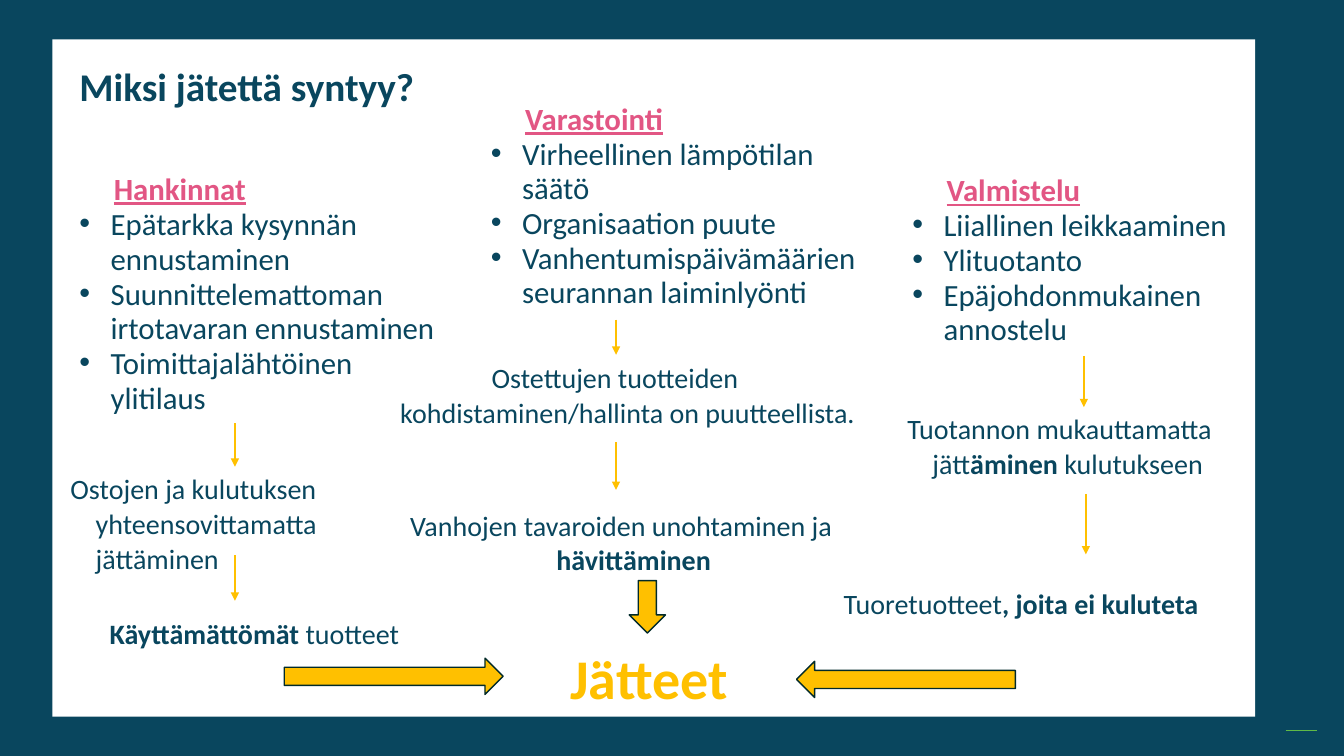
from pptx import Presentation
from pptx.dml.color import RGBColor
from pptx.enum.shapes import MSO_CONNECTOR, MSO_SHAPE
from pptx.enum.text import PP_ALIGN
from pptx.oxml.ns import qn
from pptx.util import Inches, Pt
from lxml.etree import SubElement

NAVY = RGBColor(0x09, 0x46, 0x5E)
PINK = RGBColor(0xE2, 0x56, 0x84)
GOLD = RGBColor(0xFF, 0xC0, 0x00)
GREEN = RGBColor(0x60, 0xBA, 0x47)
OUTLINE = RGBColor(0x01, 0x2A, 0x2A)
WHITE = RGBColor(0xFF, 0xFF, 0xFF)

CAUSES = [
    ((0.69, 1.66, 3.83, 3.08), "Hankinnat", [
        "Epätarkka kysynnän ennustaminen",
        "Suunnittelemattoman irtotavaran ennustaminen",
        "Toimittajalähtöinen ylitilaus"]),
    ((4.77, 0.96, 3.94, 3.08), "Varastointi", [
        "Virheellinen lämpötilan säätö",
        "Organisaation puute",
        "Vanhentumispäivämäärien seurannan laiminlyönti"]),
    ((8.95, 1.67, 3.45, 3.08), "Valmistelu", [
        "Liiallinen leikkaaminen",
        "Ylituotanto",
        "Epäjohdonmukainen annostelu"]),
]

EFFECTS = [
    ((0.6, 4.62, 3.09, 0.88), PP_ALIGN.LEFT,
     [("Ostojen ja kulutuksen yhteensovittamatta jättäminen", False)]),
    ((0.74, 6.06, 3.38, 0.88), PP_ALIGN.RIGHT,
     [("Käyttämättömät ", True), ("tuotteet ", False)]),
    ((3.58, 3.52, 5.04, 0.88), PP_ALIGN.CENTER,
     [("Ostettujen tuotteiden kohdistaminen/hallinta on puutteellista.", False)]),
    ((3.69, 4.98, 4.94, 0.88), PP_ALIGN.CENTER,
     [("Vanhojen tavaroiden unohtaminen ja ", False), ("hävittäminen", True)]),
    ((8.9, 4.02, 3.45, 0.88), PP_ALIGN.LEFT,
     [("Tuotannon mukauttamatta jätt", False), ("äminen ", True), ("kulutukseen", False)]),
    ((8.27, 5.76, 4.17, 0.88), PP_ALIGN.LEFT,
     [("Tuoretuotteet", False), (", joita ei kuluteta", True)]),
]

STEPS = [(2.33, 4.2, 4.63), (2.33, 5.51, 5.96), (6.11, 3.17, 3.52),
         (6.11, 4.39, 4.86), (10.75, 3.53, 4.04), (10.77, 4.9, 5.5)]

BLOCK_ARROWS = [((2.82, 6.53, 2.17, 0.36), 0),
                ((6.16, 5.84, 0.52, 0.36), 90),
                ((7.9, 6.56, 2.17, 0.36), 180)]


def add_span(para, text, size=20, color=NAVY, bold=False, underline=False):
    span = para.add_run()
    span.text = text
    span.font.name = "Calibri"
    span.font.size = Pt(size)
    span.font.color.rgb = color
    span.font.bold = bold
    span.font.underline = underline


class WasteSlide:
    line_pitch = Pt(24.8)
    heading_tab = Inches(0.34)

    def __init__(self, page):
        self.page = page
        page.background.fill.solid()
        page.background.fill.fore_color.rgb = NAVY

    def shape(self, kind, area, fill, outline=None, rotation=0):
        shape = self.page.shapes.add_shape(kind, *map(Inches, area))
        shape.shadow.inherit = False
        shape.rotation = rotation
        shape.fill.solid()
        shape.fill.fore_color.rgb = fill
        if outline is None:
            shape.line.fill.background()
        else:
            shape.line.color.rgb = outline
            shape.line.width = Pt(1)

    def line(self, start, end, color, width, arrow=False):
        line = self.page.shapes.add_connector(
            MSO_CONNECTOR.STRAIGHT, *map(Inches, start + end))
        line.line.color.rgb = color
        line.line.width = Pt(width)
        if arrow:
            SubElement(line.line._get_or_add_ln(), qn("a:tailEnd"), type="triangle")
        SubElement(line._element.spPr, qn("a:effectLst"))

    def box(self, area):
        frame = self.page.shapes.add_textbox(*map(Inches, area)).text_frame
        frame.word_wrap = True
        return frame

    def indent(self, para, hanging):
        properties = para._p.get_or_add_pPr()
        properties.set("marL", str(Inches(hanging)))
        properties.set("indent", str(Inches(-hanging)))
        return properties

    def headline(self, area, text, size, color):
        para = self.box(area).paragraphs[0]
        para.line_spacing = 0.9
        add_span(para, text, size=size, color=color, bold=True)

    def cause(self, area, heading, points):
        frame = self.box(area)
        para = frame.paragraphs[0]
        para.line_spacing = self.line_pitch
        tabs = SubElement(para._p.get_or_add_pPr(), qn("a:tabLst"))
        SubElement(tabs, qn("a:tab"), pos=str(self.heading_tab), algn="l")
        add_span(para, "\t" + heading, size=22, color=PINK, bold=True, underline=True)
        for point in points:
            para = frame.add_paragraph()
            para.line_spacing = self.line_pitch
            properties = self.indent(para, 0.31)
            SubElement(properties, qn("a:buFont"), typeface="Arial")
            SubElement(properties, qn("a:buChar"), char="•")
            add_span(para, point, size=22)

    def effect(self, area, alignment, parts):
        para = self.box(area).paragraphs[0]
        para.alignment = alignment
        para.line_spacing = self.line_pitch
        self.indent(para, 0.25)
        for text, bold in parts:
            add_span(para, text, bold=bold)


def main():
    deck = Presentation()
    deck.slide_width = Inches(13.33)
    deck.slide_height = Inches(7.5)
    slide = WasteSlide(deck.slides.add_slide(deck.slide_layouts[6]))

    slide.shape(MSO_SHAPE.RECTANGLE, (0.52, 0.39, 11.93, 6.72), WHITE)
    slide.line((12.75, 7.25), (13.06, 7.25), GREEN, 1)
    slide.headline((0.69, 0.62, 12, 1.42), "Miksi jätettä syntyy?", 28, NAVY)
    for cause in CAUSES:
        slide.cause(*cause)
    for effect in EFFECTS:
        slide.effect(*effect)
    for x, top, bottom in STEPS:
        slide.line((x, top), (x, bottom), GOLD, 1.5, arrow=True)
    slide.headline((5.56, 6.41, 2, 1.17), "Jätteet", 40, GOLD)
    for area, rotation in BLOCK_ARROWS:
        slide.shape(MSO_SHAPE.RIGHT_ARROW, area, GOLD, OUTLINE, rotation)
    deck.save("out.pptx")


if __name__ == "__main__":
    main()
